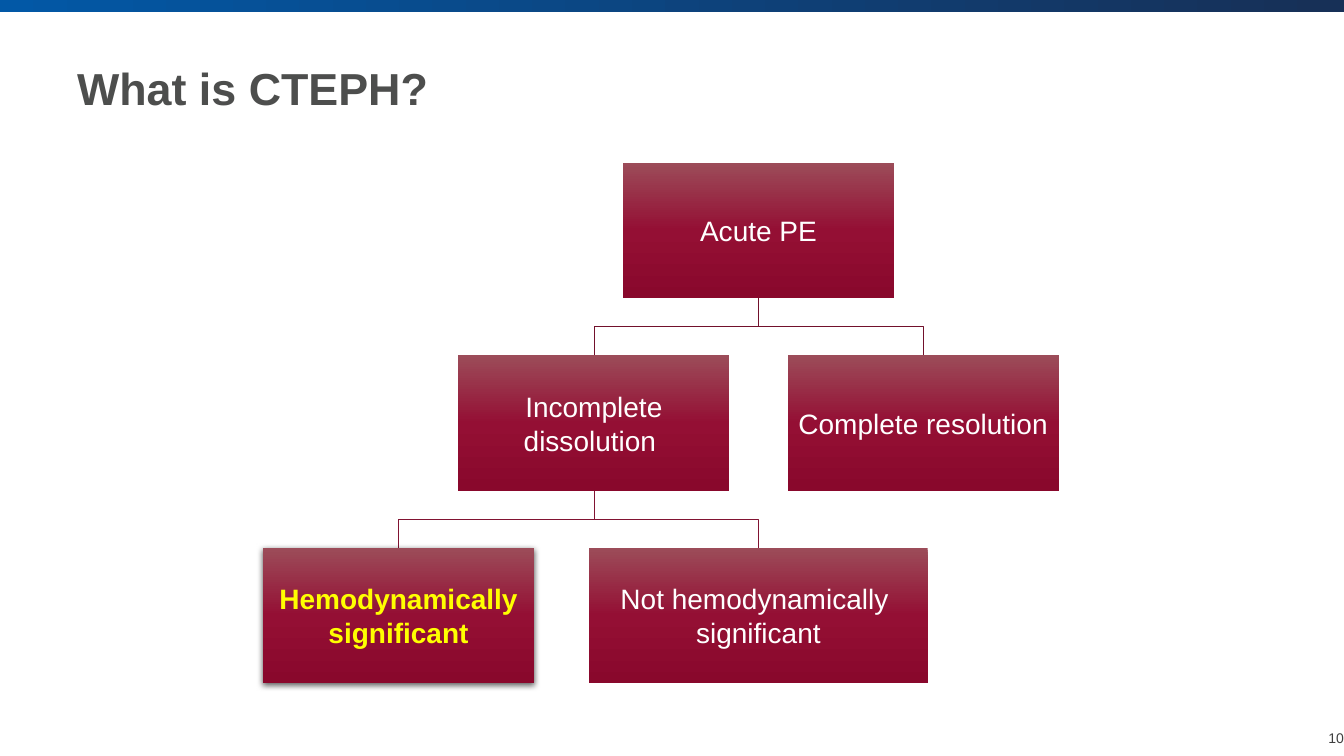
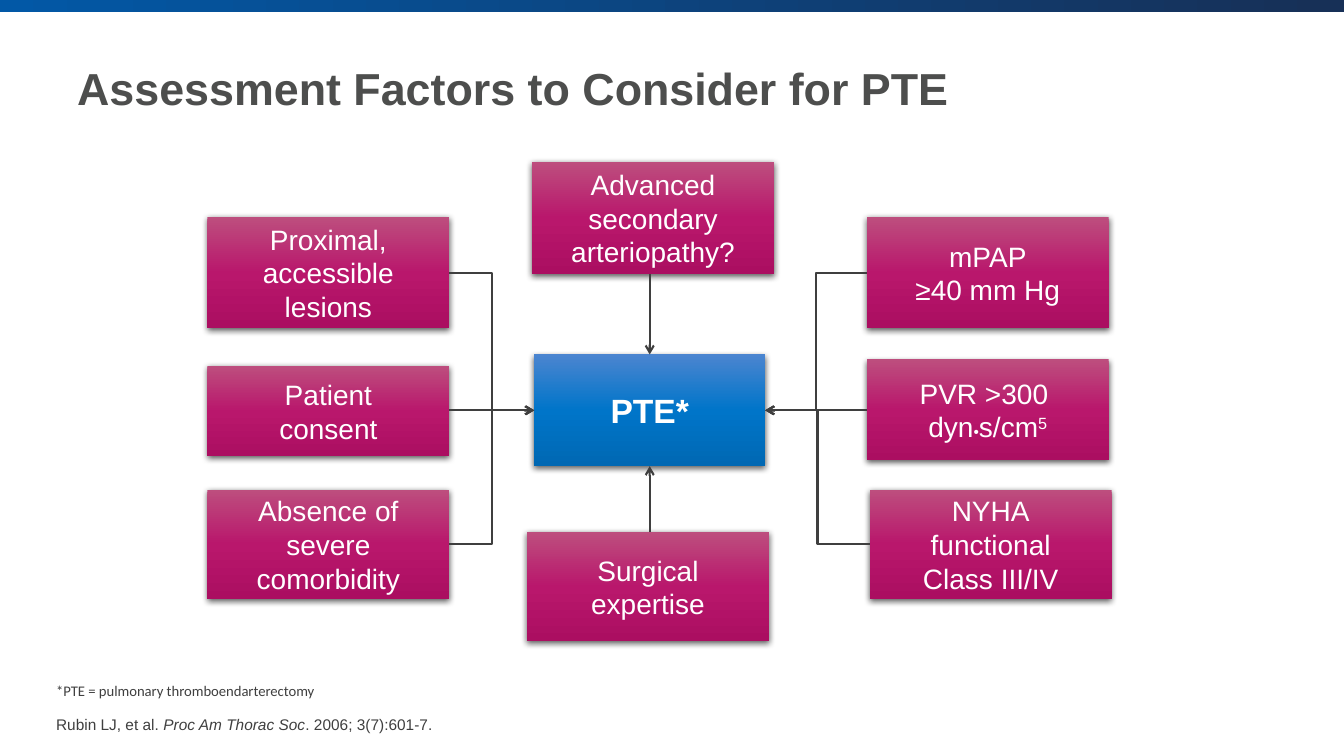
from dataclasses import dataclass
from pptx import Presentation
from pptx.dml.color import RGBColor as RGB
from pptx.enum.shapes import MSO_CONNECTOR as CONN, MSO_SHAPE as SHAPE
from pptx.enum.text import MSO_ANCHOR as ANCHOR, PP_ALIGN as ALIGN
from pptx.oxml import parse_xml
from pptx.oxml.ns import nsdecls, qn
from pptx.util import Emu, Pt

COLS, ROWS, UNIT = 160, 90, 76200


@dataclass(frozen=True)
class Theme:
    font: str = "Arial"
    note_font: str = "Calibri"
    heading: str = "4D4E4D"
    ink: str = "3F3F3F"
    white: str = "FFFFFF"
    accent: str = "FFFF00"
    band: tuple = ((0, "0258A6"), (99, "173057"))
    node: tuple = ((0, "9C4C59"), (50, "940F34"), (100, "89082C"))
    factor: tuple = ((0, "BD4E7E"), (50, "B9176C"), (100, "AB0E61"))
    hub: tuple = ((0, "4B85D0"), (50, "0075C9"), (100, "0068B3"))
    branches: tuple = ("72112C", "811332")
    title_size: float = 32
    hub_size: float = 24
    body_size: float = 20
    dot_size: float = 11
    source_size: float = 11
    note_size: float = 10.5
    page_size: float = 10


T = Theme()


@dataclass(frozen=True)
class Box:
    x: float
    y: float
    w: float
    h: float

    def at(self, x, y, w, h):
        return Box(self.x + x, self.y + y, w, h)

    @property
    def cx(self):
        return self.x + self.w / 2

    @property
    def cy(self):
        return self.y + self.h / 2

    @property
    def right(self):
        return self.x + self.w

    @property
    def bottom(self):
        return self.y + self.h

    @property
    def emu(self):
        return emu(self.x, self.y, self.w, self.h)


def emu(*units):
    return [Emu(round(u * UNIT)) for u in units]


def write(tf, paras, align=ALIGN.LEFT, anchor=ANCHOR.TOP, inset=None, **base):
    frame = dict(word_wrap=True, vertical_anchor=anchor)
    if inset is not None:
        sides = ("left", "right", "top", "bottom")
        frame.update({f"margin_{side}": emu(inset)[0] for side in sides})
    for name, value in frame.items():
        setattr(tf, name, value)
    for i, runs in enumerate(paras):
        p = tf.paragraphs[0] if i == 0 else tf.add_paragraph()
        p.alignment = align
        for text, own in [(runs, {})] if isinstance(runs, str) else runs:
            r = p.add_run()
            r.text = text
            look = dict(name=T.font, size=T.body_size, color=T.ink) | base | own
            r.font.color.rgb = RGB.from_string(look.pop("color"))
            look["size"] = Pt(look["size"])
            if "baseline" in look:
                r.font._element.set("baseline", str(look.pop("baseline")))
            for name, value in look.items():
                setattr(r.font, name, value)


def label(sl, box, paras, **look):
    sp = sl.shapes.add_textbox(*box.emu)
    write(sp.text_frame, paras, **look)


def panel(sl, box, stops, angle=90, shadow=False):
    sp = sl.shapes.add_shape(SHAPE.RECTANGLE, *box.emu)
    sp.line.fill.background()
    sp.shadow.inherit = False
    sp.fill.gradient()
    spPr = sp._element.spPr
    marks = "".join(f'<a:gs pos="{pos * 1000}"><a:srgbClr val="{c}"/></a:gs>'
                    for pos, c in stops)
    spPr.replace(spPr.find(qn("a:gradFill")), parse_xml(
        f'<a:gradFill {nsdecls("a")} rotWithShape="1"><a:gsLst>{marks}</a:gsLst>'
        f'<a:lin ang="{angle * 60000}" scaled="0"/></a:gradFill>'))
    if shadow:
        spPr.find(qn("a:effectLst")).append(parse_xml(
            f'<a:outerShdw {nsdecls("a")} blurRad="{Pt(4.5)}" dist="{Pt(1.5)}" '
            'dir="5400000" algn="ctr" rotWithShape="0"><a:srgbClr val="000000">'
            '<a:alpha val="63000"/></a:srgbClr></a:outerShdw>'))
    return sp


def card(sl, box, stops, paras, shadow=True, **look):
    sp = panel(sl, box, stops, shadow=shadow)
    style = dict(align=ALIGN.CENTER, anchor=ANCHOR.MIDDLE, color=T.white)
    write(sp.text_frame, paras, **(style | look))


def arrow(sl, start, end):
    kind = CONN.STRAIGHT if start[0] == end[0] or start[1] == end[1] else CONN.ELBOW
    cx = sl.shapes.add_connector(kind, *emu(*start, *end))
    cx.line.color.rgb = RGB.from_string(T.ink)
    cx.line.width = Pt(1.5)
    spPr = cx._element.spPr
    spPr.find(qn("a:ln")).append(parse_xml(f'<a:tailEnd {nsdecls("a")} type="arrow"/>'))
    spPr.append(parse_xml(f'<a:effectLst {nsdecls("a")}/>'))


def branch(sl, parent, child, color):
    mid = (parent.bottom + child.y) / 2
    start, *rest = [emu(*pt) for pt in (
        (parent.cx, parent.bottom), (parent.cx, mid), (child.cx, mid), (child.cx, child.y))]
    fb = sl.shapes.build_freeform(*start)
    fb.add_line_segments(rest, close=False)
    sp = fb.convert_to_shape()
    sp.shadow.inherit = False
    sp.fill.background()
    sp.line.color.rgb = RGB.from_string(color)
    sp.line.width = Pt(0.5)


def new_slide(prs, title):
    sl = prs.slides.add_slide(prs.slide_layouts[6])
    panel(sl, Box(0, 0, COLS, 1.44), T.band, angle=0)
    label(sl, Box(8, 2.65, 141, 15.6), [title], anchor=ANCHOR.MIDDLE,
          size=T.title_size, color=T.heading, bold=True)
    return sl


def tree(sl, box):
    width, height, pitch = 32.3, 16.1, 22.92
    nodes = {
        "acute": (59, 0, width, None, ["Acute PE"], {}),
        "incomplete": (39.4, 1, width, "acute", ["Incomplete dissolution "], {}),
        "complete": (78.6, 1, width, "acute", ["Complete resolution"], {}),
        "significant": (16.15, 2, width, "incomplete", ["Hemodynamically significant"],
                        dict(color=T.accent, bold=True, shadow=True)),
        "not significant": (59, 2, 40.3, "incomplete",
                            ["Not hemodynamically ", "significant"], {}),
    }
    places = {name: box.at(cx - w / 2, level * pitch, w, height)
              for name, (cx, level, w, *_) in nodes.items()}
    for name, (_, level, _, parent, *_) in nodes.items():
        if parent:
            branch(sl, places[parent], places[name], T.branches[level - 1])
    for name, (*_, paras, look) in nodes.items():
        card(sl, places[name], T.node, paras, **(dict(shadow=False, inset=0.12) | look))


def hub_diagram(sl, box):
    width = 28.8
    hub = box.at(38.9, 22.9, 27.5, 13.3)
    pvr = [("dyn", {}), ("•", dict(size=T.dot_size)), ("s/cm", {}),
           ("5", dict(baseline=30000))]
    factors = [
        ("left", 0, 6.5, 13.3, ["Proximal,", "accessible", "lesions"]),
        ("left", 0, 24.25, 10.8, ["Patient", "consent"]),
        ("left", 0, 39, 13, ["Absence of", "severe", "comorbidity"]),
        ("right", 78.5, 6.5, 13.3, ["mPAP", "≥40 mm Hg"]),
        ("right", 78.5, 23.5, 12, ["PVR >300 ", pvr]),
        ("right", 78.85, 39, 13, ["NYHA", "functional", "Class III/IV"]),
        ("top", 38.65, 0, 13.3, ["Advanced", "secondary", "arteriopathy?"]),
        ("bottom", 38.05, 44.05, 13, ["Surgical", "expertise"]),
    ]
    links = []
    for side, x, y, h, paras in factors:
        b = box.at(x, y, width, h)
        card(sl, b, T.factor, paras)
        level = hub.cy if abs(b.cy - hub.cy) < 1 else b.cy
        links.append({
            "left": ((b.right, level), (hub.x, hub.cy)),
            "right": ((b.x, level), (hub.right, hub.cy)),
            "top": ((hub.cx, b.bottom), (hub.cx, hub.y)),
            "bottom": ((hub.cx, b.y), (hub.cx, hub.bottom)),
        }[side])
    card(sl, hub, T.hub, ["PTE*"], size=T.hub_size, bold=True)
    for start, end in links:
        arrow(sl, start, end)


def page_number(sl, box, number):
    label(sl, box, [number], align=ALIGN.RIGHT, anchor=ANCHOR.MIDDLE, inset=0,
          size=T.page_size)


def footnotes(sl, box):
    label(sl, box.at(0, 0, 40, 3.4), ["*PTE = pulmonary thromboendarterectomy"],
          name=T.note_font, size=T.note_size)
    label(sl, box.at(0, 3.96, box.w, 3.48),
          [[("Rubin LJ, et al. ", {}), ("Proc Am Thorac Soc", dict(italic=True)),
            (". 2006; 3(7):601-7.", {})]], size=T.source_size)


def main():
    prs = Presentation()
    prs.slide_width, prs.slide_height = emu(COLS, ROWS)
    sl = new_slide(prs, "What is CTEPH?")
    tree(sl, Box(31.3, 19.4, 94.7, 61.95))
    page_number(sl, Box(136, 85.9, 24, 3.85), "10")
    sl = new_slide(prs, "Assessment Factors to Consider for PTE")
    hub_diagram(sl, Box(24.7, 19.3, 107.7, 57))
    footnotes(sl, Box(5.5, 80.64, 85, 7.44))
    prs.save("out.pptx")


if __name__ == "__main__":
    main()
